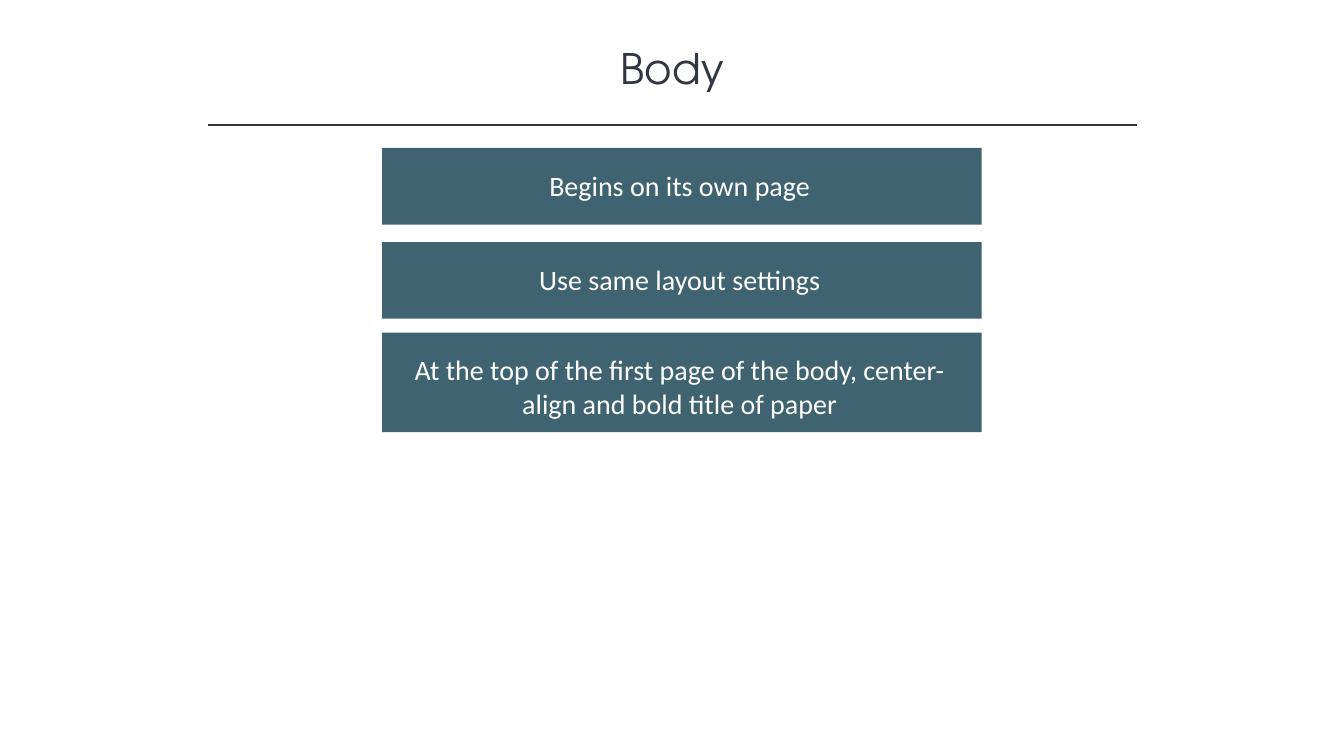
from lxml import etree
from pptx import Presentation
from pptx.dml.color import RGBColor
from pptx.enum.shapes import MSO_CONNECTOR, MSO_SHAPE
from pptx.enum.text import MSO_ANCHOR, PP_ALIGN
from pptx.oxml.ns import qn
from pptx.util import Cm, Pt

RECT = MSO_SHAPE.RECTANGLE
STRAIGHT = MSO_CONNECTOR.STRAIGHT
CENTER = PP_ALIGN.CENTER
TOP = MSO_ANCHOR.TOP

COLORS = {"ink": "323542", "teal": "3F6371", "white": "FFFFFF"}


class SlideBuilder:
    title_font = "TeX Gyre Adventor"
    body_font = "Calibri"

    def __init__(self, slide):
        self.slide = slide

    def color(self, name):
        return RGBColor.from_string(COLORS[name])

    def add_text(self, sp, text, font, size, color):
        tf = sp.text_frame
        tf.word_wrap = True
        tf.vertical_anchor = TOP
        p = tf.paragraphs[0]
        p.alignment = CENTER
        r = p.add_run()
        r.text = text
        r.font.name = font
        r.font.size = Pt(size)
        r.font.color.rgb = self.color(color)

    def title(self, text, left, top, width, height):
        sp = self.slide.shapes.add_textbox(Cm(left), Cm(top), Cm(width), Cm(height))
        self.add_text(sp, text, self.title_font, 30, "ink")

    def rule(self, left, right, y):
        line = self.slide.shapes.add_connector(
            STRAIGHT, Cm(left), Cm(y), Cm(right), Cm(y))
        line.line.color.rgb = self.color("ink")
        line.line.width = Pt(1)
        etree.SubElement(line._element.spPr, qn("a:effectLst"))

    def box(self, left, top, width, height):
        sp = self.slide.shapes.add_shape(
            RECT, Cm(left), Cm(top), Cm(width), Cm(height))
        sp.shadow.inherit = False
        sp.fill.solid()
        sp.fill.fore_color.rgb = self.color("teal")
        sp.line.fill.background()
        return sp

    def card(self, text, top, height, label_height):
        self.box(9.63, top, 15.11, height)
        label = self.box(9.8, top + 0.38, 14.66, label_height)
        self.add_text(label, text, self.body_font, 20, "white")


def main():
    prs = Presentation()
    prs.slide_width, prs.slide_height = Cm(33.87), Cm(19.05)
    s = SlideBuilder(prs.slides.add_slide(prs.slide_layouts[6]))

    s.title("Body", 4.24, 0.94, 25.4, 1.55)
    s.rule(5.23, 28.65, 3.15)

    cards = [
        ("Begins on its own page", 3.73, 1.93, 1.12),
        ("Use same layout settings", 6.1, 1.93, 1.12),
        ("At the top of the first page of the body, center-align and bold "
         "title of paper", 8.38, 2.51, 1.96),
    ]
    for card in cards:
        s.card(*card)

    prs.save("out.pptx")


if __name__ == "__main__":
    main()
